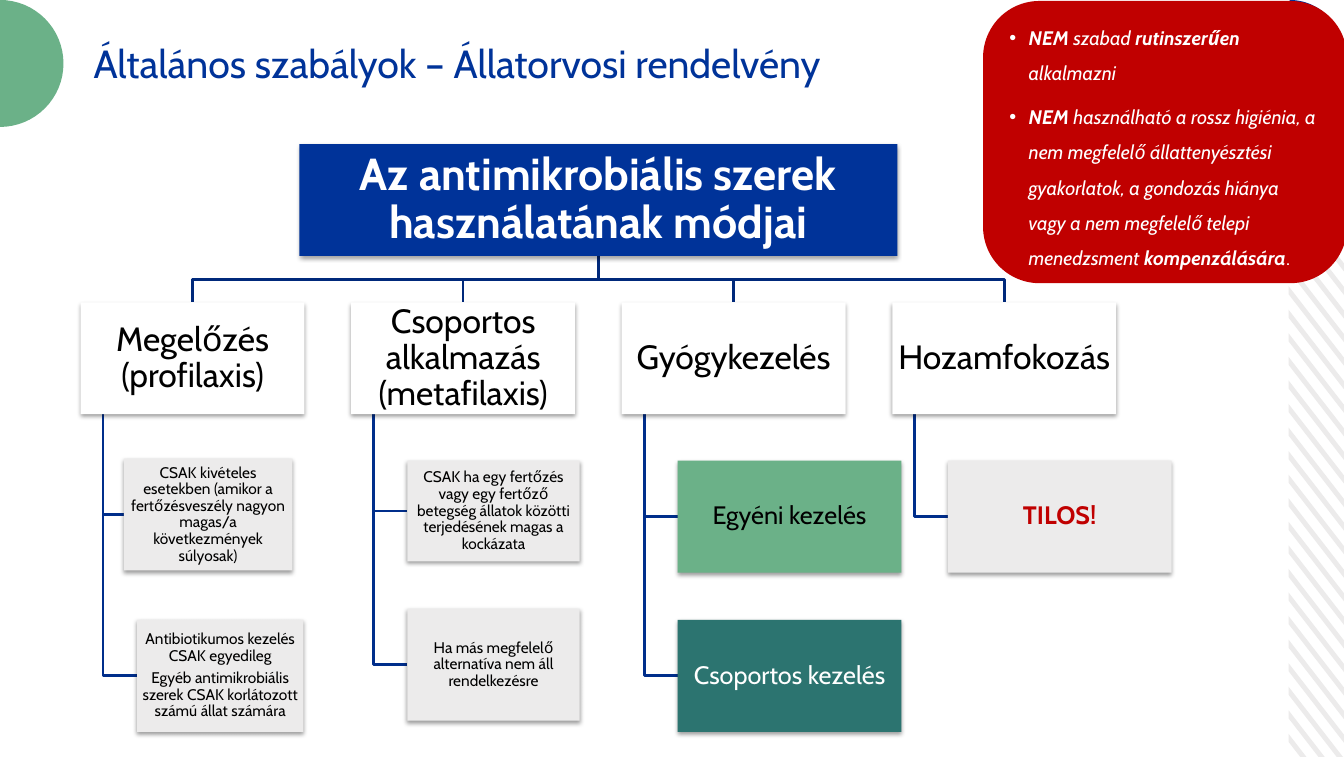
import math

import lxml.etree
import pptx
import pptx.dml.color
import pptx.enum.shapes
import pptx.enum.text
import pptx.oxml
import pptx.oxml.ns
import pptx.util

Inches = pptx.util.Inches
RGBColor = pptx.dml.color.RGBColor
MSO_SHAPE = pptx.enum.shapes.MSO_SHAPE
PP_ALIGN = pptx.enum.text.PP_ALIGN
MSO_ANCHOR = pptx.enum.text.MSO_ANCHOR
qn = pptx.oxml.ns.qn

BLUE = RGBColor(0x00, 0x33, 0x99)
TRUNK_BLUE = RGBColor(0x00, 0x29, 0x7B)
BRANCH_BLUE = RGBColor(0x00, 0x2E, 0x8B)
GREEN = RGBColor(0x6B, 0xB1, 0x88)
TEAL = RGBColor(0x2C, 0x74, 0x70)
GREY = RGBColor(0xEC, 0xEB, 0xEB)
RED = RGBColor(0xC0, 0x00, 0x00)
WHITE = RGBColor(0xFF, 0xFF, 0xFF)
BLACK = RGBColor(0x00, 0x00, 0x00)

ROOT = (2.97, 1.43, 5.93, 1.11)
COLUMN_LEFT = 0.8
COLUMN_PITCH = (8.85 - COLUMN_LEFT) / 3
COLUMN_TOP, COLUMN_WIDTH, BOX_HEIGHT = 3, 2.22, 1.11
COLUMNS = [
    ("Megelőzés (profilaxis)", [
        (["CSAK kivételes esetekben (amikor a fertőzésveszély nagyon magas/a "
          "következmények súlyosak)"],
         (1.23, 4.55, 1.67, 1.11), GREY, {"size": 11}),
        (["Antibiotikumos kezelés CSAK egyedileg",
          "Egyéb antimikrobiális szerek CSAK korlátozott számú állat számára"],
         (1.36, 6.15, 1.65, 1.11), GREY, {"size": 11}),
    ]),
    ("Csoportos alkalmazás (metafilaxis)", [
        (["CSAK ha egy fertőzés vagy egy fertőző betegség állatok közötti "
          "terjedésének magas a kockázata"],
         (4.04, 4.57, 1.71, 1), GREY, {"size": 11}),
        (["Ha más megfelelő alternatíva nem áll rendelkezésre"],
         (4.04, 6.04, 1.71, 1.11), GREY, {"size": 11}),
    ]),
    ("Gyógykezelés", [
        (["Egyéni kezelés"], (6.72, 4.57, 2.22, 1.11), GREEN, {"size": 18}),
        (["Csoportos kezelés"], (6.72, 6.15, 2.22, 1.11), TEAL,
         {"size": 18, "color": WHITE}),
    ]),
    ("Hozamfokozás", [
        (["TILOS!"], (9.4, 4.57, 2.22, 1.11), GREY,
         {"size": 18, "color": RED, "bold": True}),
    ]),
]
WARNINGS = [
    [("NEM", True), (" szabad ", False), ("rutinszerűen", True),
     (" alkalmazni", False)],
    [("NEM", True),
     (" használható a rossz higiénia, a nem megfelelő állattenyésztési "
      "gyakorlatok, a gondozás hiánya vagy a nem megfelelő telepi menedzsment ",
      False),
     ("kompenzálására", True), (".", False)],
]


def add_text(paragraph, text, size=18, color=BLACK, bold=False, italic=False):
    run = paragraph.add_run()
    run.text = text
    font = run.font
    font.name = "Cabin"
    font.size = pptx.util.Pt(size)
    font.color.rgb = color
    font.bold = bold
    font.italic = italic


def next_paragraph(frame, index):
    return frame.add_paragraph() if index else frame.paragraphs[0]


def arc(center_x, center_y, radius, start, end, steps=32):
    angles = [math.radians(start + (end - start) * step / steps)
              for step in range(steps + 1)]
    return [(center_x + radius * math.cos(angle),
             center_y + radius * math.sin(angle)) for angle in angles]


def stripe_outlines(left=12.78, top=1.54, right=13.33, bottom=7.51):
    rise, thickness, pitch = 0.71, 0.08, (7.28 - 1.67) / 24
    slope = rise / (right - left)

    def edge(start):
        points = []
        for x, y in ((left, start), (right, start + rise)):
            clipped = min(max(y, top), bottom)
            points.append((x + (clipped - y) / slope, clipped))
        return points

    return [edge(7.28 - pitch * index)
            + edge(7.28 - pitch * index + thickness)[::-1]
            for index in range(28)]


class SlideBuilder:
    def __init__(self, slide):
        self.slide = slide

    def outline(self, contours, fill=None, line=None):
        closed = fill is not None
        builder = None
        for contour in contours:
            start, *rest = [(Inches(x), Inches(y)) for x, y in contour]
            if builder is None:
                builder = self.slide.shapes.build_freeform(*start)
            else:
                builder.move_to(*start)
            builder.add_line_segments(rest, close=closed)
        self.paint(builder.convert_to_shape(), fill, line)

    def paint(self, shape, fill=None, line=None):
        shape.shadow.inherit = False
        if fill is None:
            shape.fill.background()
        else:
            shape.fill.solid()
            shape.fill.fore_color.rgb = fill
        if line is None:
            shape.line.fill.background()
        else:
            shape.line.color.rgb = line
            shape.line.width = pptx.util.Pt(2)

    def title(self, text, bounds):
        box = self.slide.shapes.add_textbox(*map(Inches, bounds))
        box.text_frame.word_wrap = True
        add_text(box.text_frame.paragraphs[0], text, size=28, color=BLUE)

    def box(self, texts, bounds, fill, inset=0.01, **style):
        shape = self.slide.shapes.add_shape(
            MSO_SHAPE.RECTANGLE, *map(Inches, bounds))
        self.paint(shape, fill)
        self.drop_shadow(shape)
        frame = shape.text_frame
        frame.word_wrap = True
        frame.vertical_anchor = MSO_ANCHOR.MIDDLE
        frame.margin_left = frame.margin_right = Inches(inset)
        frame.margin_top = frame.margin_bottom = Inches(inset)
        for index, text in enumerate(texts):
            paragraph = next_paragraph(frame, index)
            paragraph.alignment = PP_ALIGN.CENTER
            paragraph.line_spacing = 0.9
            paragraph.space_after = pptx.util.Pt(style["size"] * 0.35)
            add_text(paragraph, text, **style)

    def drop_shadow(self, shape):
        effects = shape._element.spPr.find(qn("a:effectLst"))
        shadow = lxml.etree.SubElement(
            effects, qn("a:outerShdw"), blurRad="40000", dist="20000",
            dir="5400000", rotWithShape="0")
        color = lxml.etree.SubElement(shadow, qn("a:srgbClr"), val="000000")
        lxml.etree.SubElement(color, qn("a:alpha"), val="38000")

    def warning(self, paragraphs, bounds):
        shape = self.slide.shapes.add_shape(
            MSO_SHAPE.ROUNDED_RECTANGLE, *map(Inches, bounds))
        shape.adjustments[0] = 0.2
        self.paint(shape, RED)
        frame = shape.text_frame
        frame.word_wrap = True
        frame.vertical_anchor = MSO_ANCHOR.MIDDLE
        for index, runs in enumerate(paragraphs):
            paragraph = next_paragraph(frame, index)
            paragraph.alignment = PP_ALIGN.LEFT
            paragraph.line_spacing = 1.5
            paragraph.space_after = pptx.util.Pt(6)
            properties = paragraph._p.get_or_add_pPr()
            properties.set("marL", str(Inches(0.19)))
            properties.set("indent", str(Inches(-0.19)))
            bullet_color = lxml.etree.SubElement(properties, qn("a:buClr"))
            lxml.etree.SubElement(
                bullet_color, qn("a:srgbClr"), val=str(WHITE))
            lxml.etree.SubElement(
                properties, qn("a:buFont"), typeface="Arial")
            lxml.etree.SubElement(properties, qn("a:buChar"), char="•")
            for text, bold in runs:
                add_text(paragraph, text, size=14, color=WHITE, bold=bold,
                         italic=text != ".")


def draw_tree(builder):
    root_x, root_bottom = ROOT[0] + ROOT[2] / 2, ROOT[1] + ROOT[3]
    middle_y = (root_bottom + COLUMN_TOP) / 2
    column_bottom = COLUMN_TOP + BOX_HEIGHT
    lefts = [COLUMN_LEFT + COLUMN_PITCH * index
             for index in range(len(COLUMNS))]

    for left, (heading, leaves) in zip(lefts, COLUMNS):
        center_x, stem_x = left + COLUMN_WIDTH / 2, left + COLUMN_WIDTH / 10
        builder.outline([[(root_x, root_bottom), (root_x, middle_y),
                          (center_x, middle_y), (center_x, COLUMN_TOP)]],
                        line=TRUNK_BLUE)
        for texts, (x, y, width, height), fill, style in leaves:
            leaf_y = y + height / 2
            builder.outline([[(stem_x, column_bottom), (stem_x, leaf_y),
                              (x, leaf_y)]], line=BRANCH_BLUE)

    builder.box(["Az antimikrobiális szerek használatának módjai"], ROOT, BLUE,
                inset=0.02, size=32, color=WHITE, bold=True)
    for left, (heading, leaves) in zip(lefts, COLUMNS):
        builder.box([heading], (left, COLUMN_TOP, COLUMN_WIDTH, BOX_HEIGHT),
                    WHITE, inset=0.02, size=24)
        for texts, bounds, fill, style in leaves:
            builder.box(texts, bounds, fill, **style)


def main():
    presentation = pptx.Presentation()
    presentation.slide_width = Inches(13.33)
    presentation.slide_height = Inches(7.51)
    slide = presentation.slides.add_slide(presentation.slide_layouts[6])
    builder = SlideBuilder(slide)
    builder.outline(stripe_outlines(), fill=GREY)
    builder.outline([[(12.79, 0.53)] + arc(12.79, 0.53, 0.53, -90, 0)],
                    fill=BLUE)
    builder.outline([arc(0, 0.63, 0.63, -90, 90)], fill=GREEN)
    builder.title("Általános szabályok – Állatorvosi rendelvény",
                  (0.83, 0.34, 8.76, 0.58))
    draw_tree(builder)
    builder.warning(WARNINGS, (9.75, 0.01, 3.61, 2.8))
    presentation.save("out.pptx")


if __name__ == "__main__":
    main()
